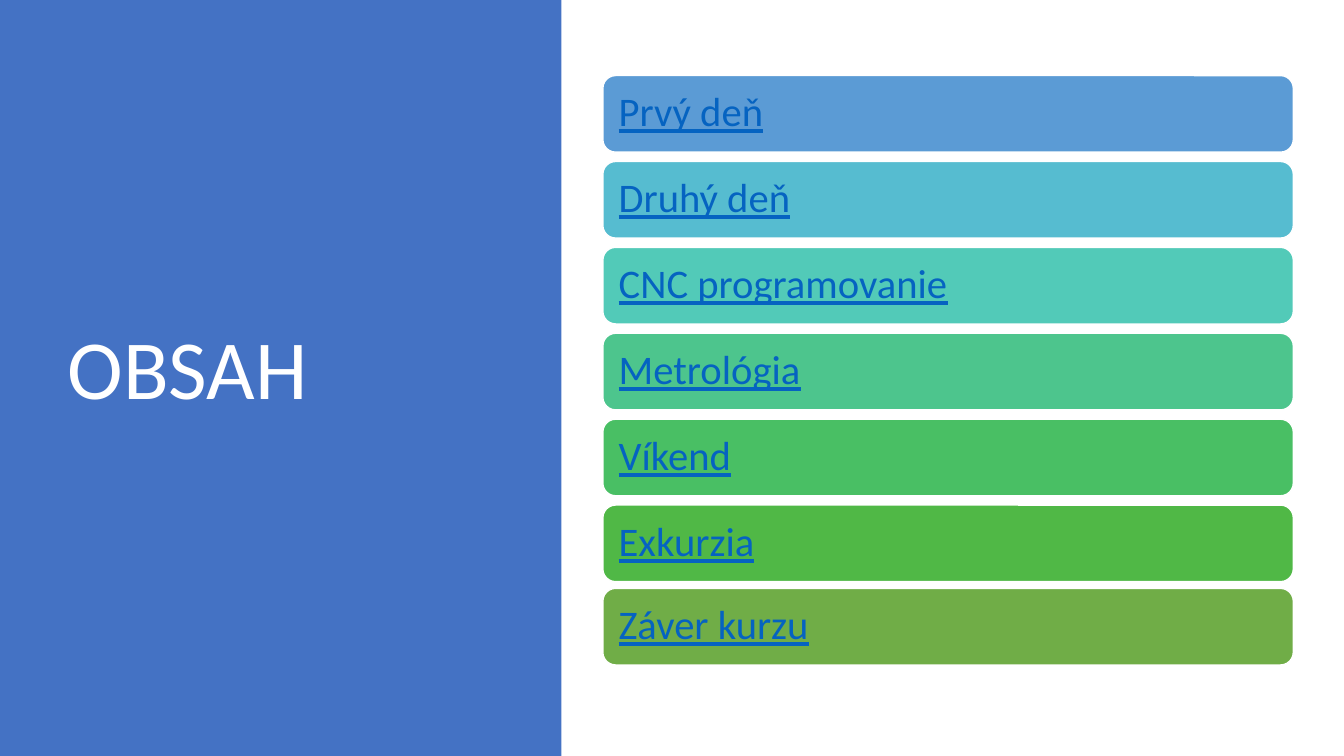
from dataclasses import dataclass

from pptx import Presentation
from pptx.dml.color import RGBColor
from pptx.enum.shapes import MSO_SHAPE
from pptx.enum.text import MSO_ANCHOR, MSO_AUTO_SIZE, PP_ALIGN
from pptx.util import Pt

RECT, ROUNDED = MSO_SHAPE.RECTANGLE, MSO_SHAPE.ROUNDED_RECTANGLE
LEFT, MIDDLE, NO_FIT = PP_ALIGN.LEFT, MSO_ANCHOR.MIDDLE, MSO_AUTO_SIZE.NONE


@dataclass(frozen=True)
class Theme:
    font: str = "Calibri"
    white: str = "FFFFFF"
    panel: str = "4472C4"
    link: str = "0563C1"
    title_size: float = 60
    item_size: float = 29


THEME = Theme()
SLIDE_W, SLIDE_H = 960, 540
PANEL_BOX = (0, 0, 401, SLIDE_H)
LIST_BOX = (430.6, 54, 493.2, 421)

# Chapter name, bar colour
CHAPTERS = [
    ("Prvý deň", "5B9BD5"),
    ("Druhý deň", "56BCD0"),
    ("CNC programovanie", "52CAB8"),
    ("Metrológia", "4DC58D"),
    ("Víkend", "49BF64"),
    ("Exkurzia", "50B846"),
    ("Záver kurzu", "70AD47"),
]


def set_attrs(target, values):
    for name, value in values.items():
        setattr(target, name, value)


def place(sp, x, y, w, h):
    set_attrs(sp, {"left": Pt(x), "top": Pt(y), "width": Pt(w), "height": Pt(h)})


def add_block(slide, kind, box, fill):
    sp = slide.shapes.add_shape(kind, *map(Pt, box))
    sp.shadow.inherit = False
    sp.fill.solid()
    sp.fill.fore_color.rgb = RGBColor.from_string(fill)
    sp.line.fill.background()
    return sp


def write(sp, text, size, color, inset_x, underline=False):
    tf = sp.text_frame
    set_attrs(tf, {"word_wrap": True, "auto_size": NO_FIT,
                   "vertical_anchor": MIDDLE,
                   "margin_left": Pt(inset_x), "margin_right": Pt(inset_x)})
    p = tf.paragraphs[0]
    set_attrs(p, {"alignment": LEFT, "line_spacing": 0.9})
    r = p.add_run()
    r.text = text
    set_attrs(r.font, {"name": THEME.font, "size": Pt(size),
                       "underline": underline})
    r.font.color.rgb = RGBColor.from_string(color)


def title_panel(slide, box, text):
    x, y, w, h = box
    panel = add_block(slide, RECT, box, THEME.panel)
    title = slide.shapes.title
    title.element.addprevious(panel.element)  # panel goes behind the title
    place(title, x + 41, y + 49, w - 101.5, h - 106.6)
    write(title, text, THEME.title_size, THEME.white, 7.2)


def chapter_list(slide, box, chapters):
    x, y, w, h = box
    bar_h, pitch = 54.7, 61.36
    for i, (name, fill) in enumerate(chapters):
        # The last bar rests on the bottom of the box
        top = min(y + i * pitch, y + h - bar_h)
        bar = add_block(slide, ROUNDED, (x, top, w, bar_h), fill)
        bar.line.color.rgb = RGBColor.from_string(THEME.white)
        bar.line.width = Pt(1)
        write(bar, name, THEME.item_size, THEME.link, 8.64, underline=True)


def contents_slide(prs):
    slide = prs.slides.add_slide(prs.slide_layouts[5])
    # Left: title panel
    title_panel(slide, PANEL_BOX, "OBSAH")
    # Right: chapter bars
    chapter_list(slide, LIST_BOX, CHAPTERS)


def main():
    prs = Presentation()
    set_attrs(prs, {"slide_width": Pt(SLIDE_W), "slide_height": Pt(SLIDE_H)})
    contents_slide(prs)
    prs.save("out.pptx")


if __name__ == "__main__":
    main()
